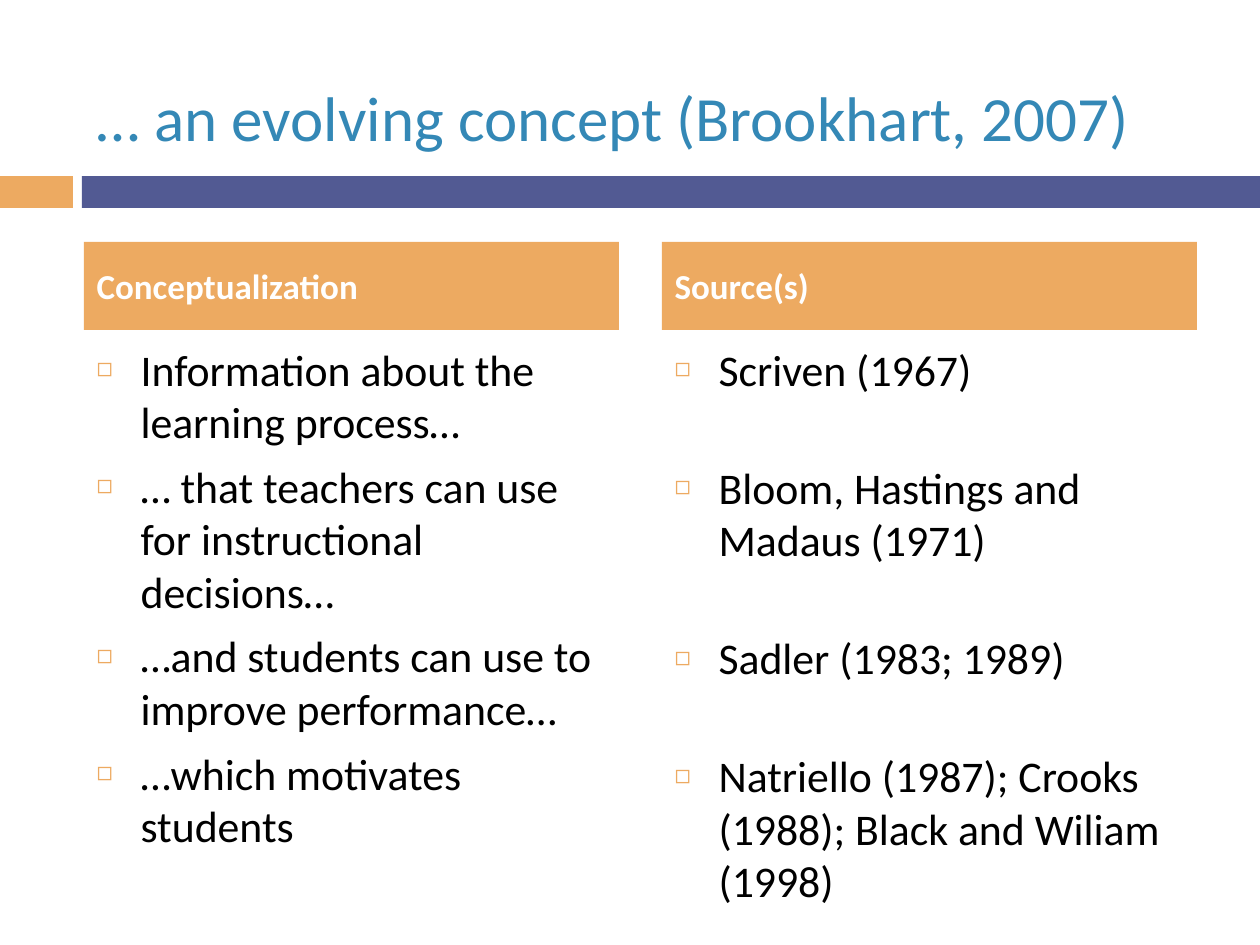
"""Build a comparison slide pairing conceptualizations with their sources."""
from dataclasses import dataclass

from lxml.etree import SubElement
from pptx import Presentation
from pptx.dml.color import RGBColor
from pptx.enum.shapes import MSO_SHAPE
from pptx.enum.text import MSO_ANCHOR, MSO_AUTO_SIZE, PP_ALIGN
from pptx.oxml.ns import qn
from pptx.util import Pt

SCALE = 914400 / 126
COLORS = {
    "accent": "EDAA61",
    "band": "525A93",
    "title": "3488B6",
    "header": "FFFFFF",
    "body": "000000",
}
FONT = "Calibri"
COLUMN_WIDTH = 535
BULLET_INDENT = 44


@dataclass(frozen=True)
class Box:
    left: int
    top: int
    width: int
    height: int


@dataclass(frozen=True)
class Column:
    left: int
    list_height: int
    header_index: int
    list_index: int
    item_gap: float
    header: str
    items: tuple[str, ...]


BARS = ((Box(0, 176, 73, 32), "accent"), (Box(82, 176, 1178, 32), "band"))
COLUMNS = (
    Column(84, 567, 1, 2, 7, "Conceptualization", (
        "Information about the learning process…",
        "… that teachers can use for instructional decisions…",
        "…and students can use to improve performance…",
        "…which motivates students",
    )),
    Column(662, 494, 3, 4, 37.5, "Source(s)", (
        "Scriven (1967)",
        "Bloom, Hastings and Madaus (1971)",
        "Sadler (1983; 1989)",
        "Natriello (1987); Crooks (1988); Black and Wiliam (1998)",
    )),
)


def px(length: int) -> int:
    return round(length * SCALE)


def fill_shape(shape, color: str) -> None:
    shape.fill.solid()
    shape.fill.fore_color.rgb = RGBColor.from_string(COLORS[color])


def draw_bar(slide, box: Box, color: str) -> None:
    bar = slide.shapes.add_shape(
        MSO_SHAPE.RECTANGLE, px(box.left), px(box.top), px(box.width), px(box.height))
    fill_shape(bar, color)
    bar.line.fill.background()
    bar.shadow.inherit = False


def place_text(placeholder, box: Box, anchor: MSO_ANCHOR, lines: tuple[str, ...]):
    placeholder.left, placeholder.top = px(box.left), px(box.top)
    placeholder.width, placeholder.height = px(box.width), px(box.height)
    frame = placeholder.text_frame
    frame.text = "\n".join(lines)
    frame.word_wrap = True
    frame.auto_size = MSO_AUTO_SIZE.NONE
    frame.vertical_anchor = anchor
    return frame.paragraphs


def format_paragraph(paragraph, size: int, color: str, bold: bool = False,
                     space_before: float = 0) -> None:
    paragraph.alignment = PP_ALIGN.LEFT
    paragraph.space_before = Pt(space_before)
    font = paragraph.font
    font.name, font.size, font.bold = FONT, Pt(size), bold
    font.color.rgb = RGBColor.from_string(COLORS[color])


def add_bullet(paragraph) -> None:
    properties = paragraph._p.get_or_add_pPr()
    properties.set("marL", str(px(BULLET_INDENT)))
    properties.set("indent", str(-px(BULLET_INDENT)))
    bullet_color = SubElement(properties, qn("a:buClr"))
    SubElement(bullet_color, qn("a:srgbClr"), val=COLORS["accent"])
    SubElement(properties, qn("a:buSzPct"), val="60000")
    SubElement(properties, qn("a:buChar"), char="◻")


def draw_column(slide, column: Column) -> None:
    header = slide.placeholders[column.header_index]
    fill_shape(header, "accent")
    header_box = Box(column.left, 242, COLUMN_WIDTH, 88)
    for paragraph in place_text(header, header_box, MSO_ANCHOR.MIDDLE, (column.header,)):
        format_paragraph(paragraph, 20, "header", bold=True, space_before=7)

    list_box = Box(column.left, 336, COLUMN_WIDTH, column.list_height)
    body = slide.placeholders[column.list_index]
    paragraphs = place_text(body, list_box, MSO_ANCHOR.TOP, column.items)
    for position, paragraph in enumerate(paragraphs):
        add_bullet(paragraph)
        gap = column.item_gap if position else 7
        format_paragraph(paragraph, 25, "body", space_before=gap)


def main() -> None:
    deck = Presentation()
    deck.slide_width, deck.slide_height = px(1260), px(945)
    slide = deck.slides.add_slide(deck.slide_layouts.get_by_name("Comparison"))
    for box, color in BARS:
        draw_bar(slide, box, color)
    title = ("… an evolving concept (Brookhart, 2007)",)
    title_box = Box(84, 38, 1176, 157)
    for paragraph in place_text(slide.shapes.title, title_box, MSO_ANCHOR.MIDDLE, title):
        format_paragraph(paragraph, 36, "title")
    for column in COLUMNS:
        draw_column(slide, column)
    deck.save("out.pptx")


if __name__ == "__main__":
    main()
